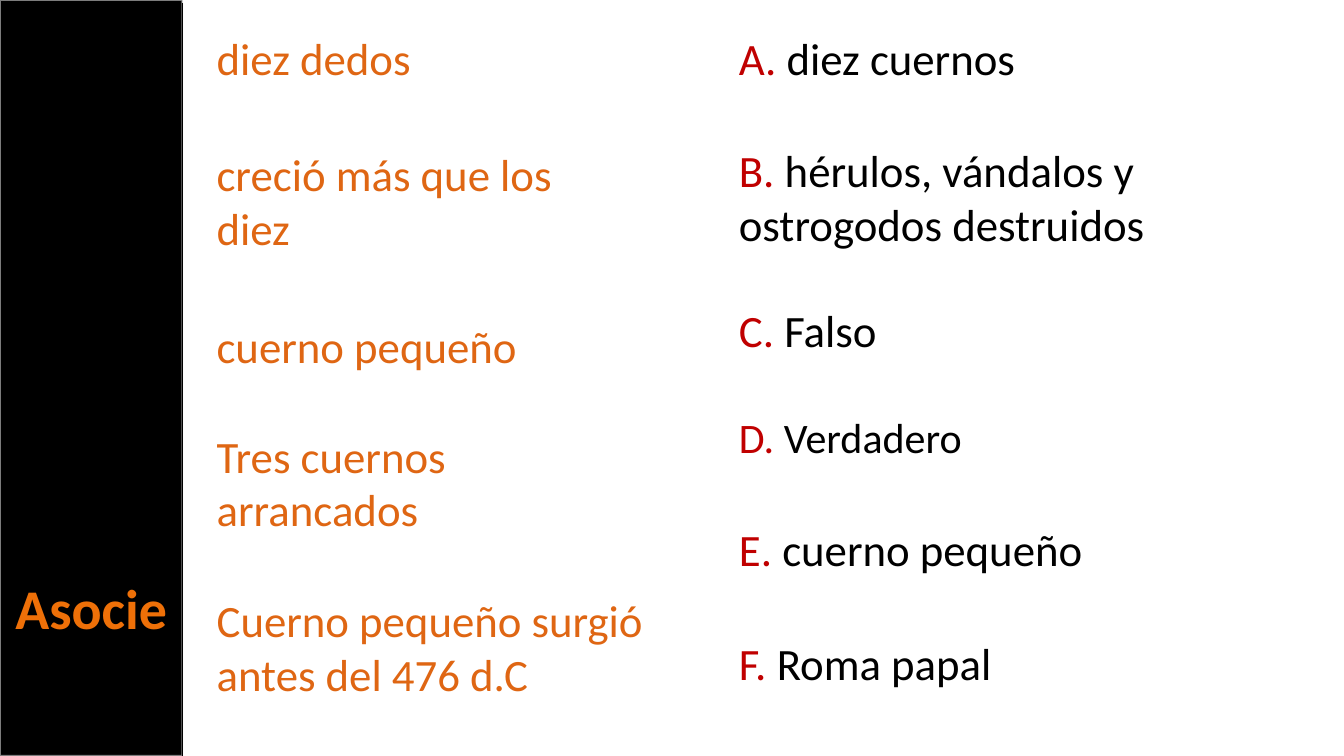
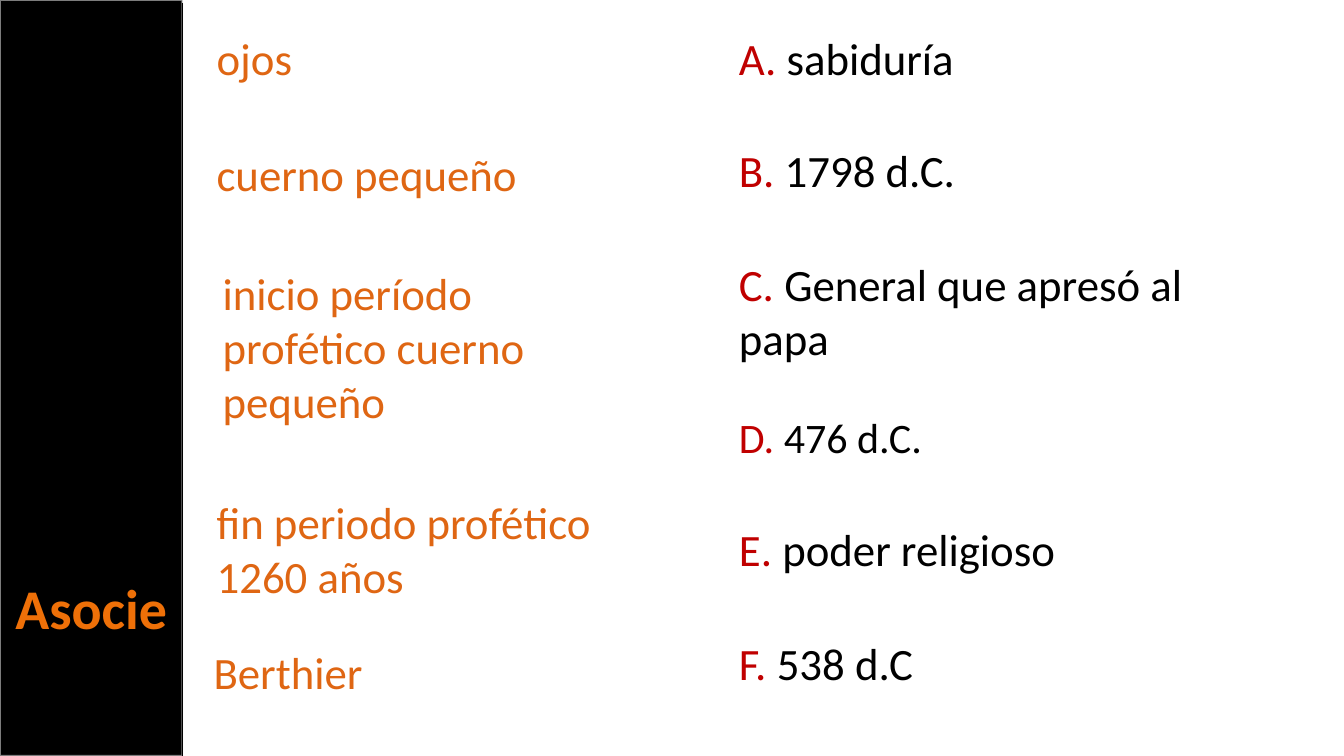
import pptx
import pptx.util
import pptx.dml.color
import pptx.enum.shapes
import pptx.enum.text
import pptx.oxml
import pptx.oxml.ns
from lxml import etree

Inches = pptx.util.Inches
Pt = pptx.util.Pt
RGBColor = pptx.dml.color.RGBColor
qn = pptx.oxml.ns.qn

# Shared look
BLACK = RGBColor(0x00, 0x00, 0x00)
PALE = RGBColor(0xF9, 0xF9, 0xF9)
BRIGHT = RGBColor(0xEE, 0x70, 0x08)
ORANGE = RGBColor(0xDF, 0x66, 0x13)
RED = RGBColor(0xC0, 0x00, 0x00)
FONT = "Calibri"
BAND = 1.81
LEFT = 2.05
RIGHT = 7.23
LINE = 0.54  # height of one line of 32 pt text

# Clues: text, left, top, width, lines
# Answers: letter, text, top, width, lines, size
PAGES = [
    (
        [
            ("diez dedos", LEFT, 0.26, 4.59, 1),
            ("creció más que los diez", LEFT, 1.41, 3.84, 2),
            ("cuerno pequeño", LEFT, 3.11, 4.13, 1),
            ("Tres cuernos arrancados", LEFT, 4.2, 4.39, 2),
            ("Cuerno pequeño surgió antes del 476 d.C", LEFT, 5.83, 4.59, 2),
        ],
        [
            ("A. ", "diez cuernos", 0.26, 5, 1, 32),
            ("B. ", "hérulos, vándalos y ostrogodos destruidos", 1.37, 4.53, 2, 32),
            ("C. ", "Falso", 2.95, 6.02, 1, 32),
            ("D. ", "Verdadero", 4.03, 4.18, 1, 30),
            ("E. ", "cuerno pequeño", 5.13, 5.59, 1, 32),
            ("F. ", "Roma papal", 6.26, 5.59, 1, 32),
        ],
    ),
    (
        [
            ("ojos", LEFT, 0.26, 1.57, 1),
            ("cuerno pequeño", LEFT, 1.41, 3.84, 1),
            ("inicio período profético cuerno pequeño", 2.11, 2.59, 4.15, 3),
            ("fin periodo profético 1260 años", LEFT, 4.86, 4.39, 2),
            ("Berthier", 2.02, 6.35, 2.43, 1),
        ],
        [
            ("A. ", "sabiduría", 0.26, 5, 1, 32),
            ("B. ", "1798 d.C.", 1.37, 4.53, 1, 32),
            ("C. ", "General que apresó al papa", 2.5, 4.87, 2, 32),
            ("D. ", "476 d.C.", 4.03, 4.18, 1, 30),
            ("E. ", "poder religioso", 5.13, 5.59, 1, 32),
            ("F. ", "538 d.C", 6.26, 5.59, 1, 32),
        ],
    ),
]


def add_run(para, text, size, color, bold=False):
    run = para.add_run()
    run.text = text
    run.font.name = FONT
    run.font.size = Pt(size)
    run.font.bold = bold
    run.font.color.rgb = color


def add_text(slide, left, top, width, lines, size, runs):
    box = slide.shapes.add_textbox(
        Inches(left), Inches(top), Inches(width), Inches(0.1 + LINE * lines))
    frame = box.text_frame
    frame.word_wrap = True
    frame.auto_size = pptx.enum.text.MSO_AUTO_SIZE.SHAPE_TO_FIT_TEXT
    for text, color in runs:
        add_run(frame.paragraphs[0], text, size, color)


deck = pptx.Presentation()
deck.slide_width = Inches(13.33)
deck.slide_height = Inches(7.5)

for clues, answers in PAGES:
    slide = deck.slides.add_slide(deck.slide_layouts[5])
    title = slide.shapes.title

    # Black side band, placed behind the title
    band = slide.shapes.add_shape(
        pptx.enum.shapes.MSO_SHAPE.RECTANGLE, 0, 0, Inches(BAND), Inches(7.5))
    band.shadow.inherit = False
    band.fill.solid()
    band.fill.fore_color.rgb = BLACK
    band.line.color.rgb = PALE
    band.line.width = Pt(1.35)
    tint = band.line.fill.fore_color._xFill.find(qn("a:srgbClr"))
    etree.SubElement(tint, qn("a:alpha")).set("val", "50000")
    title.element.addprevious(band.element)

    # Title on the band
    title.left, title.top = Inches(0), Inches(5.64)
    title.width, title.height = Inches(BAND), Inches(0.77)
    frame = title.text_frame
    frame.word_wrap = True
    frame.auto_size = pptx.enum.text.MSO_AUTO_SIZE.NONE
    frame.vertical_anchor = pptx.enum.text.MSO_ANCHOR.TOP
    frame.paragraphs[0].alignment = pptx.enum.text.PP_ALIGN.CENTER
    add_run(frame.paragraphs[0], "Asocie", 40, BRIGHT, True)

    # Clues on the left, answers on the right
    for text, left, top, width, lines in clues:
        add_text(slide, left, top, width, lines, 32, [(text, ORANGE)])
    for letter, text, top, width, lines, size in answers:
        add_text(slide, RIGHT, top, width, lines, size,
                 [(letter, RED), (text, BLACK)])

    # Thin edge along the band
    edge = slide.shapes.add_connector(
        pptx.enum.shapes.MSO_CONNECTOR.STRAIGHT,
        Inches(BAND), Inches(0.03), Inches(BAND), Inches(7.5))
    edge.line.color.rgb = BLACK
    edge.line.width = Pt(0.85)
    etree.SubElement(edge.element.spPr, qn("a:effectLst"))

deck.save("out.pptx")
